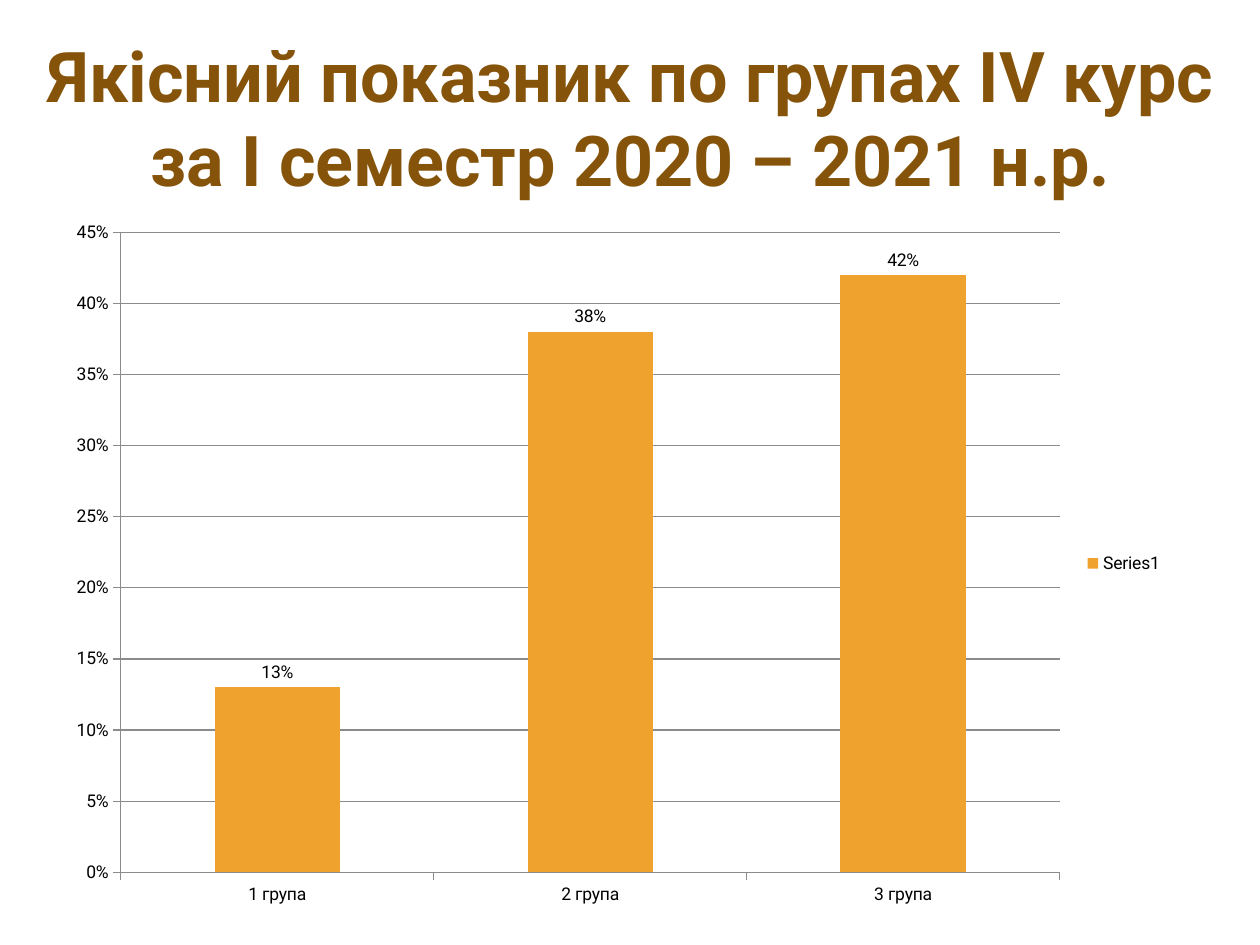
"""Build a slide with a column chart of the quality rate by student group."""
from dataclasses import dataclass

from pptx import Presentation
from pptx.chart.data import CategoryChartData
from pptx.dml.color import RGBColor
from pptx.enum.chart import XL_CHART_TYPE as ChartType
from pptx.enum.chart import XL_LABEL_POSITION as LabelPosition
from pptx.enum.chart import XL_LEGEND_POSITION as LegendPosition
from pptx.enum.chart import XL_TICK_MARK as TickMark
from pptx.enum.text import MSO_ANCHOR as Anchor
from pptx.enum.text import MSO_AUTO_SIZE as AutoSize
from pptx.enum.text import PP_ALIGN as Align
from pptx.util import Pt


@dataclass(frozen=True)
class Theme:
    font: str = "Roboto"
    title_color: RGBColor = RGBColor(0x85, 0x54, 0x0A)
    text_color: RGBColor = RGBColor(0, 0, 0)
    bar_color: RGBColor = RGBColor(0xF0, 0xA2, 0x2E)
    line_color: RGBColor = RGBColor(0x8B, 0x8B, 0x8B)
    title_size: int = 40
    chart_size: int = 10
    line_width: float = 0.75


theme = Theme()


def format_font(font, size, color, bold=False):
    font.name = theme.font
    font.size = Pt(size)
    font.bold = bold
    font.color.rgb = color


def write_text(paragraph, text, *, size, color, bold=False, align=Align.LEFT):
    paragraph.alignment = align
    run = paragraph.add_run()
    run.text = text
    format_font(run.font, size, color, bold)


presentation = Presentation()
presentation.slide_width, presentation.slide_height = Pt(720), Pt(540)
slide = presentation.slides.add_slide(presentation.slide_layouts[5])

title = slide.shapes.title
title.left, title.top, title.width, title.height = Pt(20), Pt(14.5), Pt(680.5), Pt(104.5)
title_frame = title.text_frame
title_frame.word_wrap = True
title_frame.auto_size = AutoSize.NONE
title_frame.vertical_anchor = Anchor.MIDDLE
title_lines = ["Якісний показник по групах ІV курс", "за І семестр 2020 – 2021 н.р."]
for index, line in enumerate(title_lines):
    paragraph = title_frame.add_paragraph() if index else title_frame.paragraphs[0]
    write_text(paragraph, line, size=theme.title_size, color=theme.title_color,
               bold=True, align=Align.CENTER)

chart_data = CategoryChartData(number_format="0%")
chart_data.categories = ["1 група", "2 група", "3 група"]
chart_data.add_series("Series1", [0.13, 0.38, 0.42])
chart = slide.shapes.add_chart(ChartType.COLUMN_CLUSTERED, Pt(31), Pt(119),
                               Pt(641), Pt(406), chart_data).chart
format_font(chart.font, theme.chart_size, theme.text_color)
chart.has_title = False
chart.has_legend = True
chart.legend.position = LegendPosition.RIGHT
chart.legend.include_in_layout = False

value_axis, category_axis = chart.value_axis, chart.category_axis
value_axis.minimum_scale, value_axis.maximum_scale = 0, 0.45
value_axis.major_unit = 0.05
value_axis.has_major_gridlines = True
value_axis.tick_labels.number_format = "0%"
value_axis.tick_labels.number_format_is_linked = False
for axis in (value_axis, category_axis):
    axis.major_tick_mark = TickMark.OUTSIDE
    axis.minor_tick_mark = TickMark.NONE
for lined in (value_axis, category_axis, value_axis.major_gridlines):
    lined.format.line.color.rgb = theme.line_color
    lined.format.line.width = Pt(theme.line_width)

plot = chart.plots[0]
plot.gap_width = 150
plot.vary_by_categories = False
bars = plot.series[0]
bars.format.fill.solid()
bars.format.fill.fore_color.rgb = theme.bar_color
plot.has_data_labels = True
labels = plot.data_labels
labels.show_value = True
labels.number_format = "0%"
labels.number_format_is_linked = False
labels.position = LabelPosition.OUTSIDE_END
format_font(labels.font, theme.chart_size, theme.text_color)

presentation.save("out.pptx")
